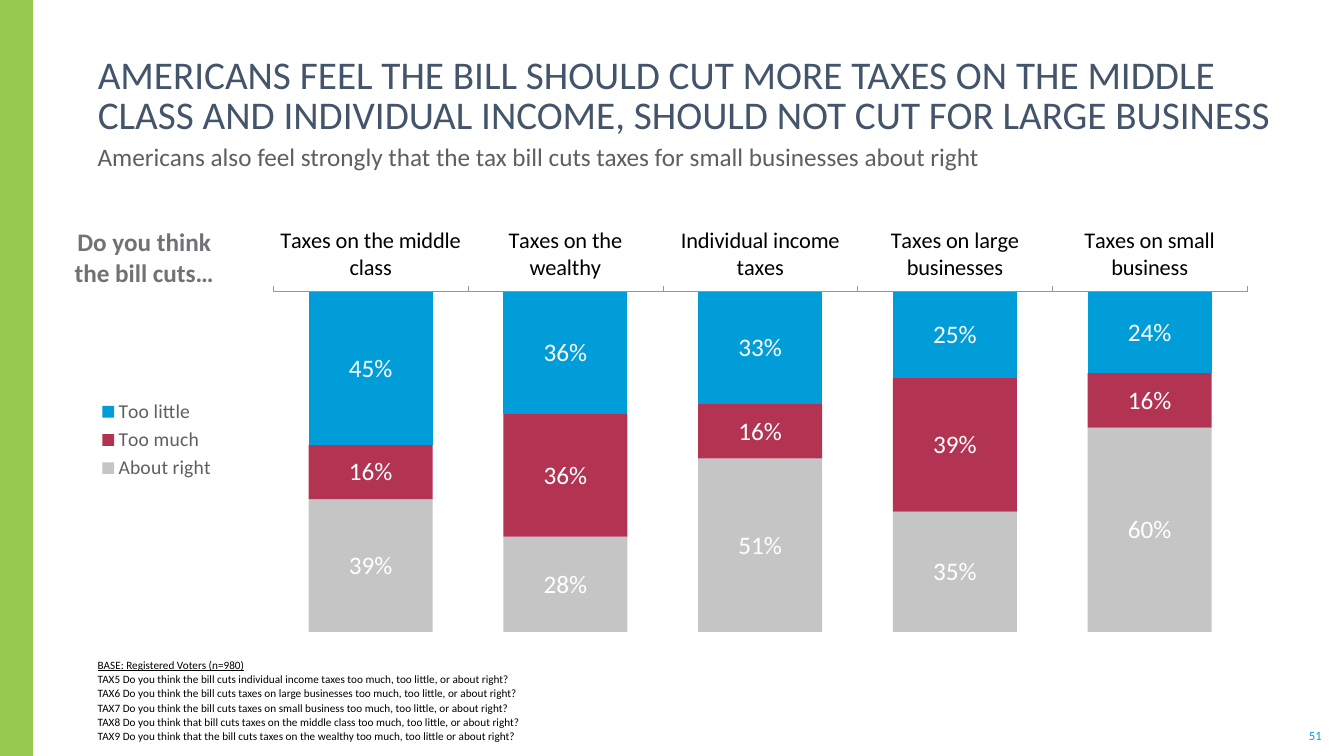
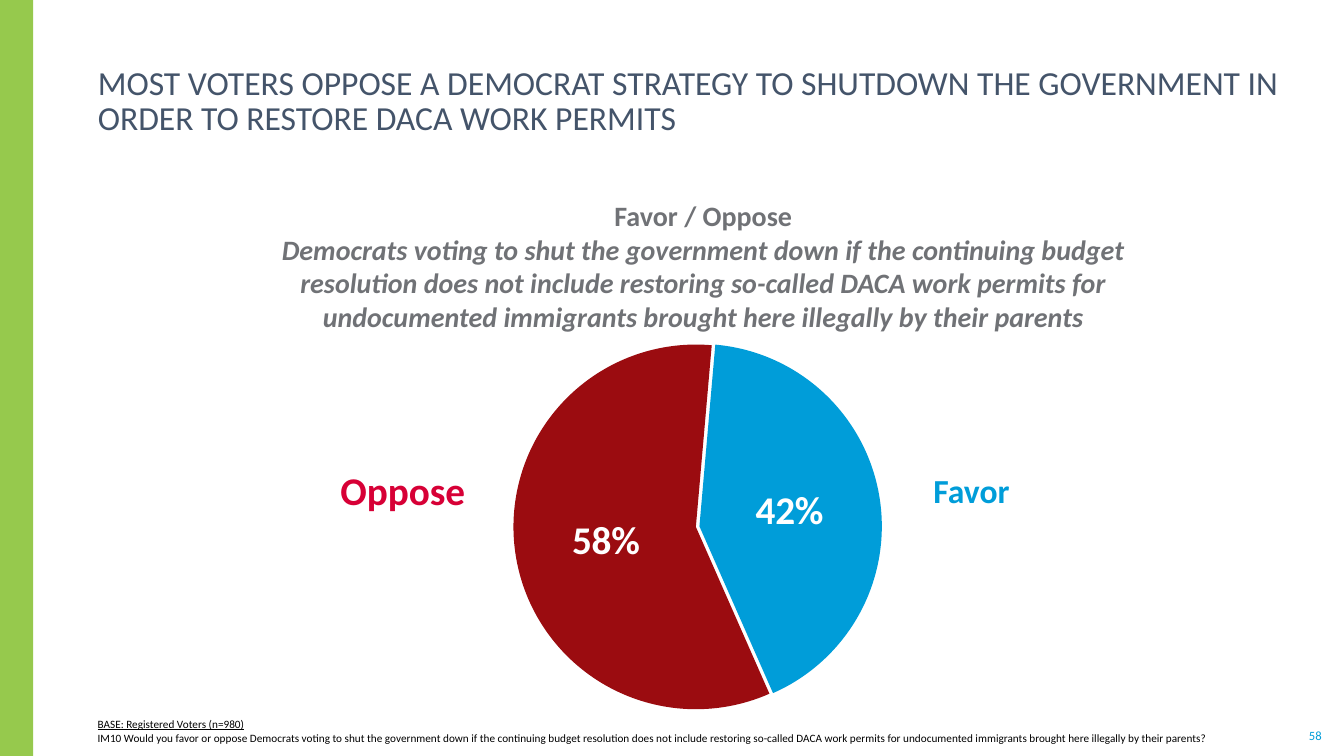
from dataclasses import dataclass

from lxml import etree
from pptx import Presentation
from pptx.chart.chart import Chart
from pptx.chart.data import CategoryChartData
from pptx.dml.color import RGBColor
from pptx.dml.fill import FillFormat
from pptx.enum.chart import (XL_AXIS_CROSSES, XL_CHART_TYPE, XL_LABEL_POSITION,
                             XL_LEGEND_POSITION, XL_TICK_LABEL_POSITION, XL_TICK_MARK)
from pptx.enum.shapes import MSO_SHAPE
from pptx.enum.text import MSO_ANCHOR, MSO_AUTO_SIZE, PP_ALIGN
from pptx.oxml.ns import qn
from pptx.slide import Slide
from pptx.text.text import Font, TextFrame
from pptx.util import Emu, Pt

LEFT, CENTER = PP_ALIGN.LEFT, PP_ALIGN.CENTER
TOP, MIDDLE, BOTTOM = MSO_ANCHOR.TOP, MSO_ANCHOR.MIDDLE, MSO_ANCHOR.BOTTOM
STACKED, PIE = XL_CHART_TYPE.COLUMN_STACKED_100, XL_CHART_TYPE.PIE

EMU_PER_PX = 9144  # 100 px to the inch
FONT = "Calibri"
GREEN, NAVY, BLUE = "96C94D", "44546A", "009DD9"
GRAY, QUESTION_GRAY, AXIS_GRAY, LIGHT_GRAY = "5F5F5F", "707276", "979797", "9F9F9F"
CRIMSON, RED, DARK_RED = "A10028", "D70036", "9B0C10"
BLACK, WHITE = "000000", "FFFFFF"
BASE = "BASE: Registered Voters (n=980)"
TITLE_ONLY = 5


@dataclass(frozen=True)
class Box:
    left: int
    top: int
    width: int
    height: int

    def emu(self) -> tuple[Emu, ...]:
        return tuple(px(n) for n in (self.left, self.top, self.width, self.height))


@dataclass(frozen=True)
class TextStyle:
    size: int
    color: str
    bold: bool = False
    align: PP_ALIGN = CENTER
    anchor: MSO_ANCHOR = TOP
    inset_x: int = 10
    inset_y: int = 5
    space_before: float = 0
    wrap: bool = True


@dataclass(frozen=True)
class Answer:
    name: str
    values: tuple[float, ...]
    color: str
    opacity: int = 100


TITLE_BOX = Box(87, 74, 1191, 62)
SUBTITLE = TextStyle(18, GRAY, align=LEFT, inset_y=0)
FOOTNOTE = TextStyle(8, BLACK, align=LEFT, anchor=BOTTOM, inset_y=0, space_before=0.6)
PAGE_NUMBER = TextStyle(9, BLUE, anchor=MIDDLE, inset_x=0, inset_y=0, wrap=False)

TAX_CATEGORIES = ("Taxes on the middle class", "Taxes on the wealthy",
                  "Individual income taxes", "Taxes on large businesses",
                  "Taxes on small business")
TAX_ANSWERS = (
    Answer("About right", (0.39, 0.28, 0.51, 0.35, 0.6), LIGHT_GRAY, 60),
    Answer("Too much", (0.16, 0.36, 0.16, 0.39, 0.16), CRIMSON, 80),
    Answer("Too little", (0.45, 0.36, 0.33, 0.25, 0.24), BLUE),
)
TAX_QUESTIONS = (
    "TAX5 Do you think the bill cuts individual income taxes too much, too little, or about right?",
    "TAX6 Do you think the bill cuts taxes on large businesses too much, too little, or about right?",
    "TAX7 Do you think the bill cuts taxes on small business too much, too little, or about right?",
    "TAX8 Do you think that bill cuts taxes on the middle class too much, too little, or about right?",
    "TAX9 Do you think that the bill cuts taxes on the wealthy too much, too little or about right?",
)
SHUTDOWN = ("Democrats voting to shut the government down if the continuing budget resolution "
            "does not include restoring so-called DACA work permits for undocumented "
            "immigrants brought here illegally by their parents")


def px(length: int) -> Emu:
    return Emu(length * EMU_PER_PX)


def rgb(color: str) -> RGBColor:
    return RGBColor.from_string(color)


def set_font(font: Font, size: int, color: str, bold: bool = False) -> None:
    font.name, font.size, font.bold = FONT, Pt(size), bold
    font.color.rgb = rgb(color)


def set_fill(fill: FillFormat, color: str, opacity: int = 100) -> None:
    fill.solid()
    fill.fore_color.rgb = rgb(color)
    if opacity < 100:
        for color_element in fill._xPr.iter(qn("a:srgbClr")):
            etree.SubElement(color_element, qn("a:alpha"), val=str(opacity * 1000))


def write_text(frame: TextFrame, lines: tuple[str, ...], style: TextStyle) -> None:
    frame.word_wrap = style.wrap
    frame.auto_size = MSO_AUTO_SIZE.NONE
    frame.vertical_anchor = style.anchor
    frame.margin_left = frame.margin_right = px(style.inset_x)
    frame.margin_top = frame.margin_bottom = px(style.inset_y)
    for index, line in enumerate(lines):
        paragraph = frame.add_paragraph() if index else frame.paragraphs[0]
        paragraph.text = line
        paragraph.alignment = style.align
        if index and style.space_before:
            paragraph.space_before = Pt(style.space_before)
        set_font(paragraph.font, style.size, style.color, style.bold)


def add_text(slide: Slide, box: Box, style: TextStyle, *lines: str) -> TextFrame:
    frame = slide.shapes.add_textbox(*box.emu()).text_frame
    write_text(frame, lines, style)
    return frame


def add_footnote(slide: Slide, top: int, *questions: str) -> None:
    frame = add_text(slide, Box(87, top, 1191, 40), FOOTNOTE, BASE, *questions)
    frame.paragraphs[0].font.underline = True


def start_slide(presentation: Presentation, number: int, title: str, title_size: int) -> Slide:
    """Add a slide with the green band, the page number and the title."""
    slide = presentation.slides.add_slide(presentation.slide_layouts[TITLE_ONLY])
    band = slide.shapes.add_shape(MSO_SHAPE.RECTANGLE, *Box(0, 0, 33, 750).emu())
    band.shadow.inherit = False
    set_fill(band.fill, GREEN)
    band.line.fill.background()
    add_text(slide, Box(1297, 722, 15, 15), PAGE_NUMBER, str(number))
    placeholder = slide.shapes.title
    placeholder.left, placeholder.top, placeholder.width, placeholder.height = TITLE_BOX.emu()
    style = TextStyle(title_size, NAVY, align=LEFT, anchor=BOTTOM, inset_y=0)
    write_text(placeholder.text_frame, (title,), style)
    placeholder.text_frame.paragraphs[0].line_spacing = 0.85
    return slide


def add_chart(slide: Slide, kind: XL_CHART_TYPE, box: Box, categories: tuple[str, ...],
              answers: tuple[Answer, ...], label_size: int, label_bold: bool) -> Chart:
    data = CategoryChartData(number_format="0%")
    data.categories = categories
    for answer in answers:
        data.add_series(answer.name, answer.values)
    chart = slide.shapes.add_chart(kind, *box.emu(), data).chart
    chart.has_title = chart.has_legend = False
    set_font(chart.font, 10, GRAY)
    plot = chart.plots[0]
    plot.vary_by_categories = kind == PIE
    for series in plot.series:
        labels = series.data_labels
        labels.show_value = True
        labels.number_format, labels.number_format_is_linked = "0%", False
        labels.position = XL_LABEL_POSITION.CENTER
        set_font(labels.font, label_size, WHITE, label_bold)
    return chart


def set_inner_plot(chart: Chart, x: float, y: float, w: float, h: float) -> None:
    """Fix the plot area, given as fractions of the chart."""
    plot_area = chart._chartSpace.chart.plotArea
    for old_layout in plot_area.findall(qn("c:layout")):
        plot_area.remove(old_layout)
    layout = etree.Element(qn("c:layout"))
    manual = etree.SubElement(layout, qn("c:manualLayout"))
    settings = {"layoutTarget": "inner", "xMode": "edge", "yMode": "edge",
                "x": x, "y": y, "w": w, "h": h}
    for name, value in settings.items():
        etree.SubElement(manual, qn(f"c:{name}"), val=str(value))
    plot_area.insert(0, layout)


def add_tax_chart(slide: Slide) -> None:
    chart = add_chart(slide, STACKED, Box(87, 220, 1150, 433), TAX_CATEGORIES,
                      TAX_ANSWERS, 18, False)
    plot = chart.plots[0]
    plot.gap_width, plot.overlap = 57, 100
    for series, answer in zip(plot.series, TAX_ANSWERS):
        set_fill(series.format.fill, answer.color, answer.opacity)
    values = chart.value_axis
    values.minimum_scale, values.maximum_scale = 0, 1
    values.has_major_gridlines = values.visible = False
    values.crosses = XL_AXIS_CROSSES.MAXIMUM
    categories = chart.category_axis
    categories.tick_label_position = XL_TICK_LABEL_POSITION.HIGH
    categories.major_tick_mark = XL_TICK_MARK.OUTSIDE
    categories.format.line.color.rgb = rgb(AXIS_GRAY)
    categories.format.line.width = Pt(0.25)
    set_font(categories.tick_labels.font, 16, BLACK)
    chart.has_legend = True
    chart.legend.position = XL_LEGEND_POSITION.LEFT
    chart.legend.include_in_layout = False
    set_font(chart.legend.font, 14, GRAY)
    set_inner_plot(chart, 0.16, 0.16, 0.84, 0.78)


def add_shutdown_chart(slide: Slide) -> None:
    answers = (Answer("Series 1", (0.42, 0.58), BLUE),)
    chart = add_chart(slide, PIE, Box(411, 326, 562, 393), ("1", "2"), answers, 28, True)
    series = chart.plots[0].series[0]
    for index, color in enumerate((BLUE, DARK_RED)):
        set_fill(series.points[index].format.fill, color)
    series._element.get_or_add_spPr().addnext(
        etree.Element(qn("c:explosion"), val="1"))
    pie = chart.plots[0]._element
    for old_angle in pie.findall(qn("c:firstSliceAng")):
        pie.remove(old_angle)
    etree.SubElement(pie, qn("c:firstSliceAng"), val="5")


def build_tax_slide(presentation: Presentation) -> None:
    slide = start_slide(
        presentation, 51,
        "AMERICANS FEEL THE BILL SHOULD CUT MORE TAXES ON THE MIDDLE CLASS AND "
        "INDIVIDUAL INCOME, SHOULD NOT CUT FOR LARGE BUSINESS", 28)
    add_footnote(slide, 697, *TAX_QUESTIONS)
    add_tax_chart(slide)
    add_text(slide, Box(87, 140, 1190, 34), SUBTITLE,
             "Americans also feel strongly that the tax bill cuts taxes for small "
             "businesses about right")
    add_text(slide, Box(59, 220, 168, 71), TextStyle(18, QUESTION_GRAY, bold=True),
             "Do you think the bill cuts…")


def build_shutdown_slide(presentation: Presentation) -> None:
    slide = start_slide(
        presentation, 58,
        "MOST VOTERS OPPOSE A DEMOCRAT STRATEGY TO SHUTDOWN THE GOVERNMENT IN ORDER "
        "TO RESTORE DACA WORK PERMITS", 24)
    add_footnote(slide, 699, f"IM10 Would you favor or oppose {SHUTDOWN}?")
    add_shutdown_chart(slide)
    add_text(slide, Box(308, 458, 183, 57), TextStyle(28, RED, bold=True), "Oppose")
    question = add_text(slide, Box(245, 192, 905, 145),
                        TextStyle(20, QUESTION_GRAY, bold=True), "Favor / Oppose", SHUTDOWN)
    question.paragraphs[1].font.italic = True
    add_text(slide, Box(865, 461, 197, 50), TextStyle(24, BLUE, bold=True), "Favor")


def main() -> None:
    presentation = Presentation()
    presentation.slide_width, presentation.slide_height = px(1333), px(750)
    build_tax_slide(presentation)
    build_shutdown_slide(presentation)
    presentation.save("out.pptx")


if __name__ == "__main__":
    main()
